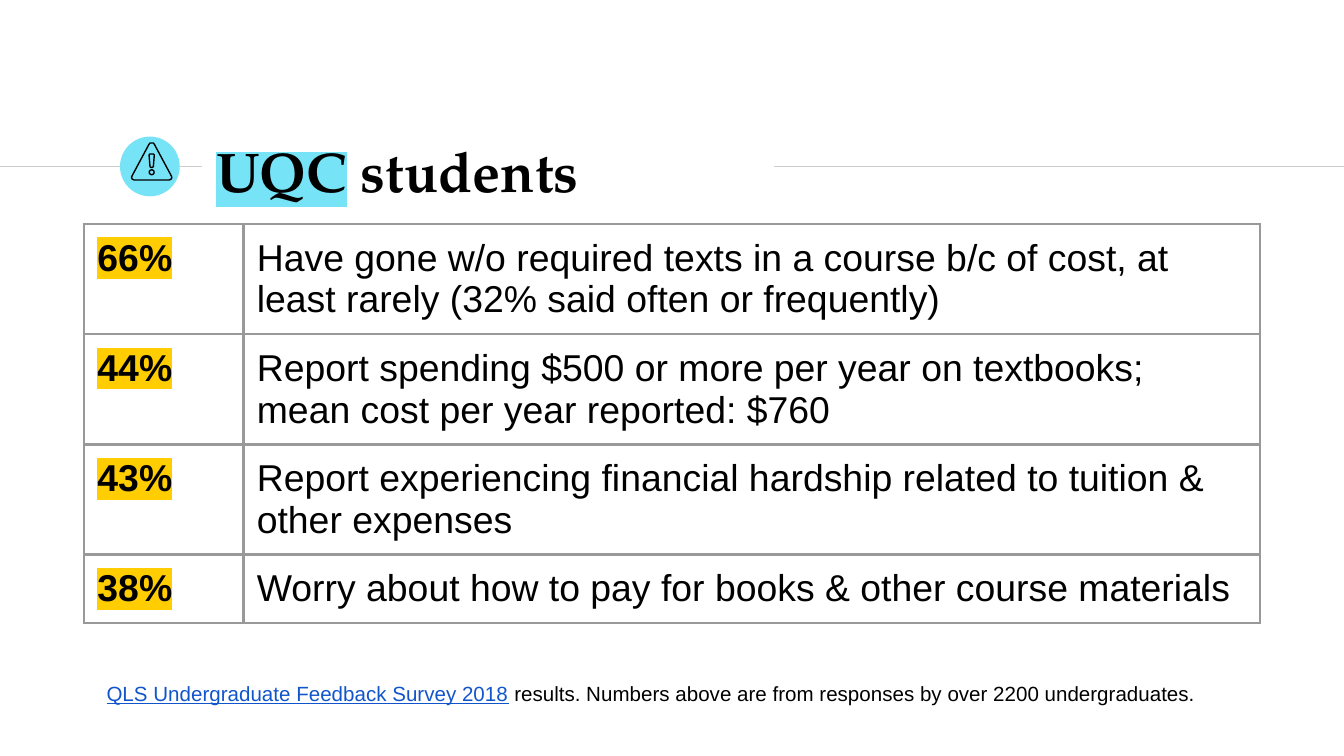
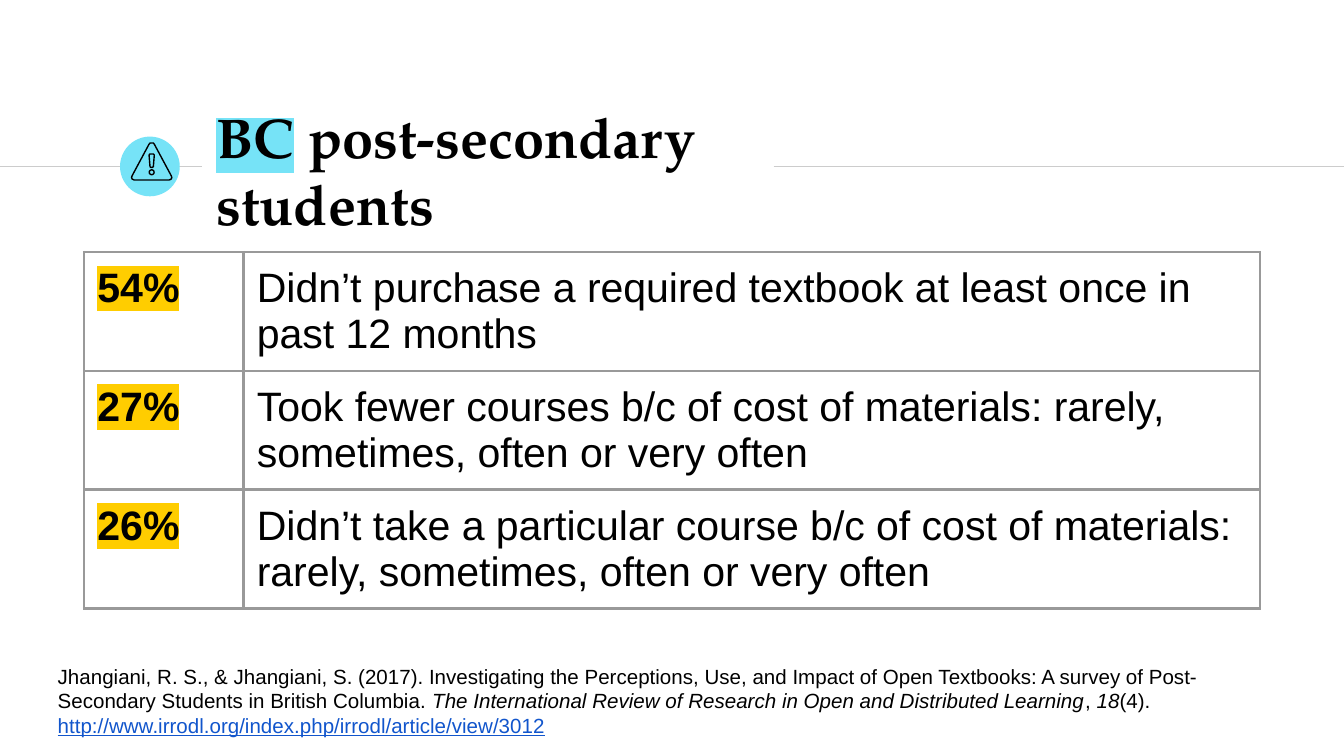
from math import cos, pi, sin

from lxml import etree
from pptx import Presentation
from pptx.dml.color import RGBColor
from pptx.enum.shapes import MSO_CONNECTOR, MSO_SHAPE
from pptx.enum.text import MSO_ANCHOR, MSO_AUTO_SIZE, PP_ALIGN
from pptx.oxml.ns import qn
from pptx.util import Pt

LINE = MSO_CONNECTOR.STRAIGHT
OVAL = MSO_SHAPE.OVAL
MIDDLE, TOP = MSO_ANCHOR.MIDDLE, MSO_ANCHOR.TOP
LEFT = PP_ALIGN.LEFT
FIXED = MSO_AUTO_SIZE.NONE

BLACK = RGBColor(0x00, 0x00, 0x00)
CYAN = RGBColor(0x76, 0xE3, 0xF7)
GOLD = RGBColor(0xFF, 0xCD, 0x00)
BLUE = RGBColor(0x11, 0x55, 0xCC)
RULE = RGBColor(0xCC, 0xCC, 0xCC)
GRID = RGBColor(0x99, 0x99, 0x99)

SERIF, SANS = "TeX Gyre Pagella", "Arial"
WIDTH, HEIGHT = 720, 405
PAD = 7.2
RULE_Y = 89.3
BADGE = (64.3, 73.2, 32)
TITLE = (108.7, 73.7, 305.5, 34.5)
COLS = (85.4, 544.6)


def set_color(parent, color):
    fill = etree.SubElement(parent, qn("a:solidFill"))
    etree.SubElement(fill, qn("a:srgbClr"), val=str(color))


def style(run, font, size, color=BLACK, bold=False, mark=None):
    run.font.name, run.font.size, run.font.bold = font, Pt(size), bold
    run.font.color.rgb = color
    if mark is not None:
        light = etree.Element(qn("a:highlight"))
        etree.SubElement(light, qn("a:srgbClr"), val=str(mark))
        run.font._element.find(qn("a:latin")).addprevious(light)


def set_frame(frame, anchor):
    frame.word_wrap, frame.auto_size = True, FIXED
    frame.vertical_anchor = anchor
    frame.margin_left = frame.margin_right = Pt(PAD)
    frame.margin_top = frame.margin_bottom = Pt(PAD)


def add_rule(slide, start, end):
    rule = slide.shapes.add_connector(
        LINE, Pt(start), Pt(RULE_Y), Pt(end), Pt(RULE_Y))
    rule.line.color.rgb, rule.line.width = RULE, Pt(0.75)
    etree.SubElement(rule._element.spPr, qn("a:effectLst"))


def add_badge(slide, left, top, size):
    disc = slide.shapes.add_shape(OVAL, Pt(left), Pt(top), Pt(size), Pt(size))
    disc.shadow.inherit = False
    disc.fill.solid()
    disc.fill.fore_color.rgb = CYAN
    disc.line.fill.background()

    # Warning sign: rounded triangle, dot and bar
    mid = 17
    half = [(0.9, 3.4), (1.5, 4.2), (10.5, 21), (10.8, 21.9),
            (10.4, 22.8), (9.4, 23.2)]
    sign = [(mid + x, y) for x, y in half]
    sign += [(mid - x, y) for x, y in reversed(half)]
    dot = [(mid + 1.3 * cos(k * pi / 8), 19.1 + 1.3 * sin(k * pi / 8))
           for k in range(16)]
    side = [(1, 9.3), (1.4, 9.9), (0.9, 16.1), (0.4, 16.5)]
    bar = [(mid + x, y) for x, y in side]
    bar += [(mid - x, y) for x, y in reversed(side)]

    pen = None
    for part in (sign, dot, bar):
        spots = [(Pt(left + x), Pt(top + y)) for x, y in part]
        if pen is None:
            pen = slide.shapes.build_freeform(*spots[0])
        else:
            pen.move_to(*spots[0])
        pen.add_line_segments(spots[1:], close=True)
    icon = pen.convert_to_shape()
    icon.shadow.inherit = False
    icon.fill.background()
    icon.line.color.rgb, icon.line.width = BLACK, Pt(0.75)


def add_title(slide, box, lines):
    title = slide.shapes.title
    title.left, title.top, title.width, title.height = map(Pt, box)
    frame = title.text_frame
    frame.text = "\n".join(lines)
    set_frame(frame, MIDDLE)
    # The first word is marked
    first = frame.paragraphs[0]
    word, rest = lines[0].split(" ", 1)
    first.runs[0].text = word
    first.add_run().text = " " + rest
    for para in frame.paragraphs:
        para.alignment = LEFT
        for run in para.runs:
            mark = CYAN if run.text == word else None
            style(run, SERIF, 30, bold=True, mark=mark)


def add_border(cell):
    props = cell._tc.get_or_add_tcPr()
    for n, side in enumerate(("a:lnL", "a:lnR", "a:lnT", "a:lnB")):
        edge = etree.Element(qn(side), w=str(Pt(1.5)))
        set_color(edge, GRID)
        props.insert(n, edge)


def add_stats(slide, box, size, stats):
    holder = slide.shapes.add_table(len(stats), 2, *map(Pt, box))
    table = holder.table
    table.first_row = table.horz_banding = False
    for col, width in zip(table.columns, COLS):
        col.width = Pt(width)
    for n, (row, texts) in enumerate(zip(table.rows, stats)):
        row.height = Pt(30 if n else 47)
        for cell, text, key in zip(row.cells, texts, (True, False)):
            cell.text = text
            cell.margin_left = cell.margin_right = Pt(PAD)
            cell.margin_top = cell.margin_bottom = Pt(PAD)
            cell.vertical_anchor = TOP
            cell.fill.background()
            add_border(cell)
            style(cell.text_frame.paragraphs[0].runs[0], SANS, size,
                  bold=key, mark=GOLD if key else None)
    holder.height = Pt(box[3])


def add_source(slide, box, parts):
    note = slide.shapes.add_textbox(*map(Pt, box))
    set_frame(note.text_frame, TOP)
    para = note.text_frame.paragraphs[0]
    for text, kind in parts:
        run = para.add_run()
        run.text = text
        style(run, SANS, 11, BLUE if kind == "link" else BLACK)
        run.font.underline = kind == "link"
        run.font.italic = kind == "italic"


def add_slide(deck, title, table, source):
    slide = deck.slides.add_slide(deck.slide_layouts[5])
    add_rule(slide, 0, 108)
    add_rule(slide, 414.5, WIDTH)
    add_badge(slide, *BADGE)
    add_title(slide, TITLE, title)
    add_stats(slide, *table)
    add_source(slide, *source)


def main():
    deck = Presentation()
    deck.slide_width, deck.slide_height = Pt(WIDTH), Pt(HEIGHT)

    # University survey
    add_slide(
        deck, ["UQC students"],
        ((45, 120, 630, 225.4), 20, [
            ("66%", "Have gone w/o required texts in a course b/c of cost, "
                    "at least rarely (32% said often or frequently)"),
            ("44%", "Report spending $500 or more per year on textbooks; "
                    "mean cost per year reported: $760"),
            ("43%", "Report experiencing financial hardship related to "
                    "tuition & other expenses"),
            ("38%", "Worry about how to pay for books & other course "
                    "materials"),
        ]),
        ((50, 357.7, 607, 27.4), [
            ("QLS Undergraduate Feedback Survey 2018", "link"),
            (" results. Numbers above are from responses by over 2200 "
             "undergraduates.", "plain"),
        ]))

    # Province survey
    add_slide(
        deck, ["BC post-secondary", "students"],
        ((45, 135, 630, 201.6), 22, [
            ("54%", "Didn’t purchase a required textbook at least once in "
                    "past 12 months"),
            ("27%", "Took fewer courses b/c of cost of materials: rarely, "
                    "sometimes, often or very often"),
            ("26%", "Didn’t take a particular course b/c of cost of "
                    "materials: rarely, sometimes, often or very often"),
        ]),
        ((23.8, 348.3, 678.2, 48.2), [
            ("Jhangiani, R. S., & Jhangiani, S. (2017). Investigating the "
             "Perceptions, Use, and Impact of Open Textbooks: A survey of "
             "Post-Secondary Students in British Columbia. ", "plain"),
            ("The International Review of Research in Open and Distributed "
             "Learning", "italic"),
            (", ", "plain"),
            ("18", "italic"),
            ("(4). ", "plain"),
            ("http://www.irrodl.org/index.php/irrodl/article/view/3012",
             "link"),
        ]))
    deck.save("out.pptx")


if __name__ == "__main__":
    main()
